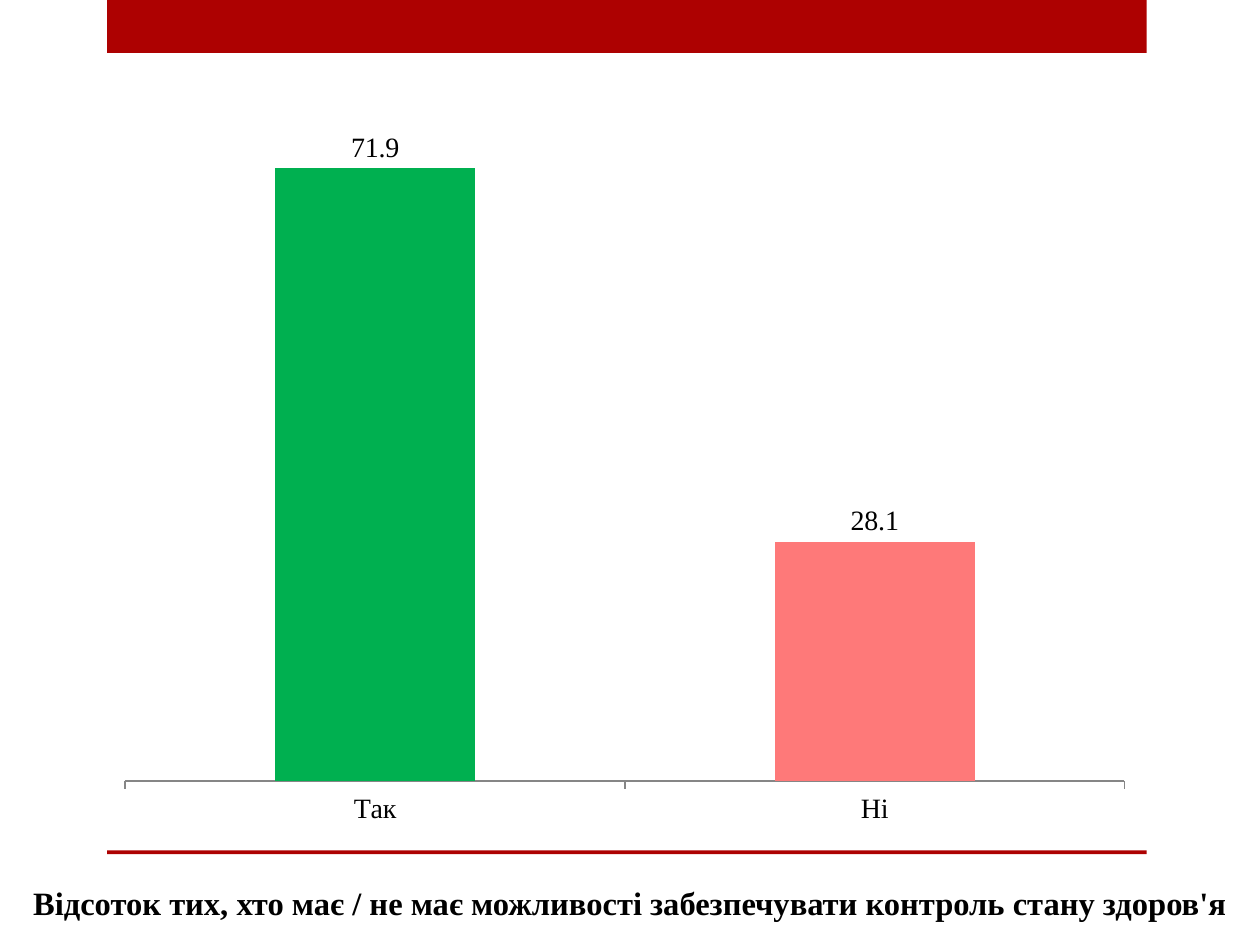
from pptx import Presentation
from pptx.chart.data import CategoryChartData
from pptx.dml.color import RGBColor
from pptx.enum.chart import XL_CHART_TYPE as ChartType, XL_LABEL_POSITION as LabelPosition
from pptx.enum.chart import XL_TICK_MARK as TickMark
from pptx.enum.shapes import MSO_SHAPE as Preset
from pptx.enum.text import MSO_ANCHOR as Anchor, PP_ALIGN as Align
from pptx.util import Inches, Pt

WIDTH, HEIGHT = 10, 7.5
FONT = "Times New Roman"
RED, GREEN, PINK, GREY, BLACK = "AD0101", "00B050", "FE7979", "868686", "000000"
BAND_LEFT, BAND_WIDTH = 0.085 * WIDTH, 0.825 * WIDTH


def color(value):
    return RGBColor.from_string(value)


def paint(fill, value):
    fill.solid()
    fill.fore_color.rgb = color(value)


def style_font(font, **values):
    font.color.rgb = color(BLACK)
    for name, value in {"name": FONT, **values}.items():
        setattr(font, name, value)


def add_band(page, box):
    band = page.shapes.add_shape(Preset.RECTANGLE, *map(Inches, box))
    band.shadow.inherit = False
    paint(band.fill, RED)
    band.line.fill.background()


def add_caption(page, box, text):
    frame = page.shapes.add_textbox(*map(Inches, box)).text_frame
    frame.word_wrap = True
    frame.vertical_anchor = Anchor.BOTTOM
    para = frame.paragraphs[0]
    para.alignment = Align.CENTER
    span = para.add_run()
    span.text = text
    style_font(span.font, size=Pt(18.6), bold=True)


def add_answer_chart(page, box, answers):
    """answers: (label, percentage, colour) for each column."""
    labels, values, colors = zip(*answers)
    data = CategoryChartData(number_format="###0.0")
    data.categories = labels
    data.add_series("Series 1", values)
    chart = page.shapes.add_chart(ChartType.COLUMN_CLUSTERED, *map(Inches, box), data).chart
    style_font(chart.font, size=Pt(16))
    chart.has_legend = chart.has_title = False

    value_axis = chart.value_axis
    value_axis.minimum_scale, value_axis.maximum_scale = 0, 80
    value_axis.has_major_gridlines = value_axis.visible = False
    category_axis = chart.category_axis
    category_axis.major_tick_mark = TickMark.OUTSIDE
    category_axis.format.line.color.rgb = color(GREY)
    category_axis.format.line.width = Pt(1)

    plot = chart.plots[0]
    plot.gap_width = 150
    plot.vary_by_categories = False
    series = plot.series[0]
    paint(series.format.fill, colors[0])
    for index, value in enumerate(colors[1:], 1):
        paint(series.points[index].format.fill, value)
    data_labels = series.data_labels
    style_font(data_labels.font, size=Pt(16))
    for name, value in {
        "show_value": True,
        "number_format": "###0.0",
        "number_format_is_linked": False,
        "position": LabelPosition.OUTSIDE_END,
    }.items():
        setattr(data_labels, name, value)


def main():
    deck = Presentation()
    deck.slide_width, deck.slide_height = Inches(WIDTH), Inches(HEIGHT)
    page = deck.slides.add_slide(deck.slide_layouts[6])
    add_band(page, (BAND_LEFT, 0, BAND_WIDTH, 0.42))
    add_band(page, (BAND_LEFT, 0.9 * HEIGHT, BAND_WIDTH, 0.03))
    add_caption(page, (0, 0.92 * HEIGHT, WIDTH, 0.47),
                "Відсоток тих, хто має / не має можливості забезпечувати контроль стану здоров'я")
    add_answer_chart(page, (0.83, 0.67, 8.26, 0.8 * HEIGHT),
                     [("Так", 71.9, GREEN), ("Ні", 28.1, PINK)])
    deck.save("out.pptx")


if __name__ == "__main__":
    main()
